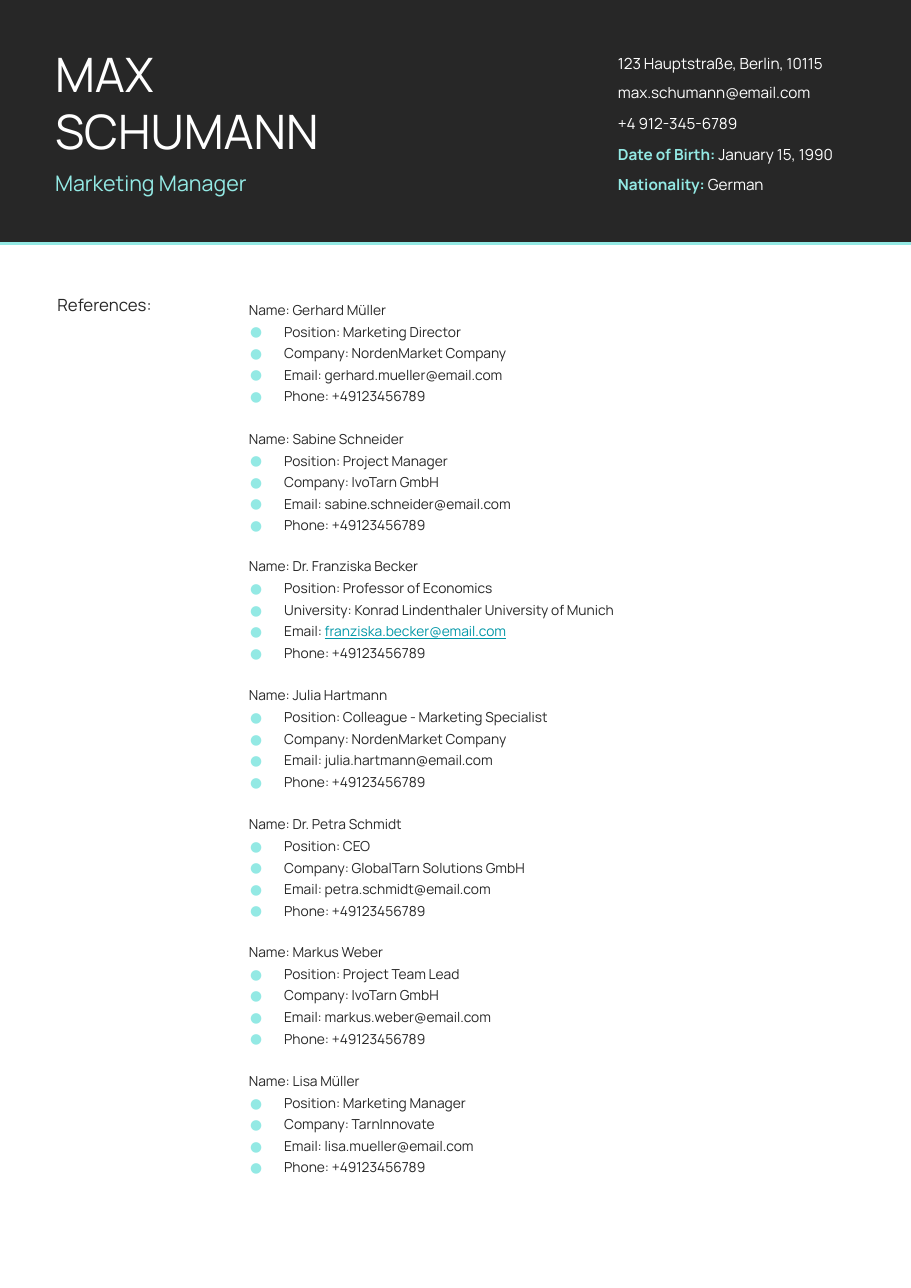
from dataclasses import dataclass

import lxml.etree
import pptx
import pptx.dml.color
import pptx.enum.shapes
import pptx.enum.text
import pptx.oxml
import pptx.oxml.ns
import pptx.shapes.shapetree
import pptx.util

EMU_PER_PX = 9144
PAGE_WIDTH, PAGE_HEIGHT = 827, 1169
HEADER_HEIGHT, RULE_TOP = 220, 221
PHONE = "+49123456789"


@dataclass(frozen=True)
class Theme:
    font: str = "Manrope"
    dark: str = "272727"
    light: str = "FFFFFF"
    accent: str = "93E9E4"
    link: str = "0097A7"
    name_size: int = 31
    role_size: int = 14
    heading_size: int = 11
    contact_size: int = 10
    body_size: int = 9
    rule_width: float = 1.5
    body_spacing: float = 1.3


THEME = Theme()


@dataclass(frozen=True)
class Span:
    text: str
    color: str | None = None
    bold: bool = False
    underline: bool = False


@dataclass(frozen=True)
class Style:
    size: int
    color: str
    spacing: float | None = None
    bulleted: bool = False


@dataclass(frozen=True)
class Frame:
    left: int
    top: int
    width: int
    height: int


@dataclass(frozen=True)
class Reference:
    name: str
    position: str
    employer: str
    email: str
    employer_label: str = "Company"
    email_linked: bool = False
    name_width: int = 190
    details_width: int = 284


Line = list[Span]

NAME = Style(THEME.name_size, THEME.light)
ROLE = Style(THEME.role_size, THEME.accent)
CONTACT = Style(THEME.contact_size, THEME.light)
HEADING = Style(THEME.heading_size, THEME.dark)
BODY = Style(THEME.body_size, THEME.dark, THEME.body_spacing)
DETAIL = Style(THEME.body_size, THEME.dark, THEME.body_spacing, bulleted=True)

CONTACTS: list[Line] = [
    [Span("123 Hauptstraße, Berlin, 10115")],
    [Span("max.schumann@email.com")],
    [Span("+4 912-345-6789")],
    [Span("Date of Birth:", THEME.accent, bold=True), Span(" January 15, 1990")],
    [Span("Nationality: ", THEME.accent, bold=True), Span("German")],
]

REFERENCES = [
    Reference("Gerhard Müller", "Marketing Director", "NordenMarket Company",
              "gerhard.mueller@email.com"),
    Reference("Sabine Schneider", "Project Manager", "IvoTarn GmbH",
              "sabine.schneider@email.com"),
    Reference("Dr. Franziska Becker", "Professor of Economics",
              "Konrad Lindenthaler University of Munich", "franziska.becker@email.com",
              employer_label="University", email_linked=True, details_width=368),
    Reference("Julia Hartmann", "Colleague - Marketing Specialist", "NordenMarket Company",
              "julia.hartmann@email.com", name_width=231, details_width=345),
    Reference("Dr. Petra Schmidt", "CEO", "GlobalTarn Solutions GmbH",
              "petra.schmidt@email.com", name_width=216, details_width=322),
    Reference("Markus Weber", "Project Team Lead", "IvoTarn GmbH",
              "markus.weber@email.com"),
    Reference("Lisa Müller", "Marketing Manager", "TarnInnovate",
              "lisa.mueller@email.com"),
]


def px(length: int) -> pptx.util.Emu:
    return pptx.util.Emu(length * EMU_PER_PX)


def rgb(color: str) -> pptx.dml.color.RGBColor:
    return pptx.dml.color.RGBColor.from_string(color)


def spread(first: int, last: int, count: int) -> list[int]:
    return [round(first + (last - first) * index / (count - 1)) for index in range(count)]


def add_bullet(properties: lxml.etree.ElementBase) -> None:
    properties.set("marL", str(px(50)))
    properties.set("indent", str(px(-31)))
    namespace = pptx.oxml.ns.nsdecls("a")
    for markup in (
        f'<a:buClr {namespace}><a:srgbClr val="{THEME.accent}"/></a:buClr>',
        f'<a:buFont {namespace} typeface="{THEME.font}"/>',
        f'<a:buChar {namespace} char="●"/>',
    ):
        properties.append(pptx.oxml.parse_xml(markup))


def add_text(shapes: pptx.shapes.shapetree._BaseGroupShapes, frame: Frame,
             lines: list[Line], style: Style) -> None:
    box = shapes.add_textbox(px(frame.left), px(frame.top), px(frame.width), px(frame.height))
    text = box.text_frame
    text.word_wrap = True
    text.auto_size = pptx.enum.text.MSO_AUTO_SIZE.SHAPE_TO_FIT_TEXT
    text.margin_left = text.margin_right = text.margin_top = text.margin_bottom = 0
    for index, line in enumerate(lines):
        para = text.add_paragraph() if index else text.paragraphs[0]
        if style.spacing:
            para.line_spacing = style.spacing
        if style.bulleted:
            add_bullet(para._p.get_or_add_pPr())
        para.font.name = THEME.font
        para.font.size = pptx.util.Pt(style.size)
        para.font.color.rgb = rgb(style.color)
        for span in line:
            run = para.add_run()
            run.text = span.text
            if span.color:
                run.font.color.rgb = rgb(span.color)
            if span.bold:
                run.font.bold = True
            if span.underline:
                run.font.underline = True


def add_header(shapes: pptx.shapes.shapetree.SlideShapes) -> None:
    band = shapes.add_shape(pptx.enum.shapes.MSO_SHAPE.RECTANGLE,
                            0, 0, px(PAGE_WIDTH), px(HEADER_HEIGHT))
    band.shadow.inherit = False
    band.fill.solid()
    band.fill.fore_color.rgb = rgb(THEME.dark)
    band.line.fill.background()
    add_text(shapes, Frame(50, 41, 330, 104), [[Span("MAX")], [Span("SCHUMANN")]], NAME)
    add_text(shapes, Frame(50, 154, 330, 24), [[Span("Marketing Manager")]], ROLE)
    group = shapes.add_group_shape()
    for top, contact in zip(spread(49, 159, len(CONTACTS)), CONTACTS):
        add_text(group.shapes, Frame(561, top, 250, 17), [contact], CONTACT)
    rule = shapes.add_connector(pptx.enum.shapes.MSO_CONNECTOR.STRAIGHT,
                                0, px(RULE_TOP), px(PAGE_WIDTH), px(RULE_TOP))
    rule.line.color.rgb = rgb(THEME.accent)
    rule.line.width = pptx.util.Pt(THEME.rule_width)
    lxml.etree.SubElement(rule._element.spPr, pptx.oxml.ns.qn("a:effectLst"))


def add_reference(shapes: pptx.shapes.shapetree.SlideShapes, top: int,
                  reference: Reference) -> None:
    email: Line = [Span(f"Email: {reference.email}")]
    if reference.email_linked:
        email = [Span("Email: "), Span(reference.email, THEME.link, underline=True)]
    details: list[Line] = [
        [Span(f"Position: {reference.position}")],
        [Span(f"{reference.employer_label}: {reference.employer}")],
        email,
        [Span(f"Phone: {PHONE}")],
    ]
    group = shapes.add_group_shape()
    add_text(group.shapes, Frame(226, top, reference.name_width, 15),
             [[Span(f"Name: {reference.name}")]], BODY)
    add_text(group.shapes, Frame(208, top + 20, reference.details_width, 74), details, DETAIL)


def main() -> None:
    deck = pptx.Presentation()
    deck.slide_width, deck.slide_height = px(PAGE_WIDTH), px(PAGE_HEIGHT)
    page = deck.slides.add_slide(deck.slide_layouts[6])
    add_header(page.shapes)
    add_text(page.shapes, Frame(52, 267, 152, 19), [[Span("References:")]], HEADING)
    for top, reference in zip(spread(269, 969, len(REFERENCES)), REFERENCES):
        add_reference(page.shapes, top, reference)
    deck.save("out.pptx")


if __name__ == "__main__":
    main()
